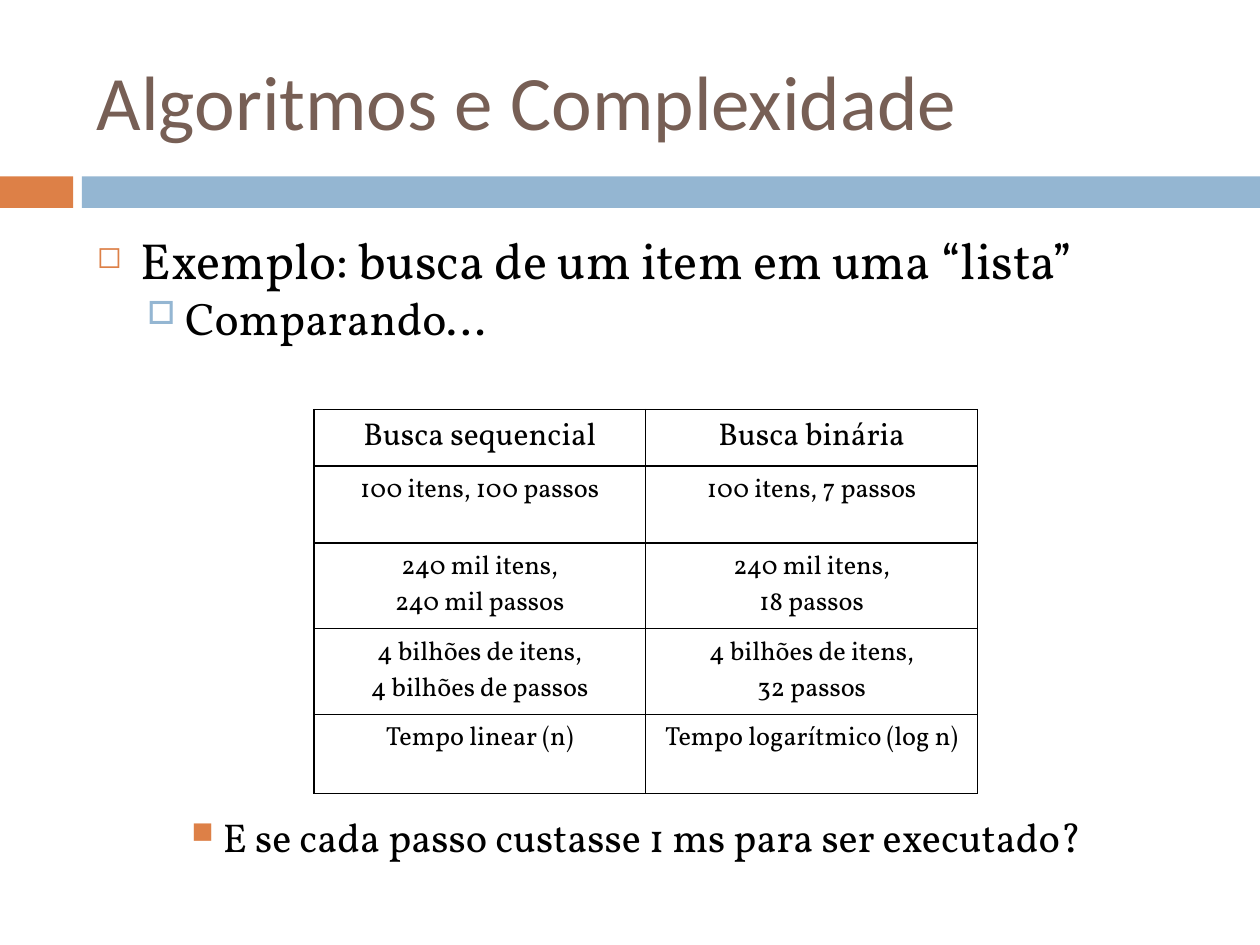
from lxml import etree
from pptx import Presentation
from pptx.dml.color import RGBColor
from pptx.enum.shapes import MSO_SHAPE
from pptx.enum.text import MSO_ANCHOR, PP_ALIGN
from pptx.oxml.ns import qn
from pptx.util import Inches, Pt

RECT = MSO_SHAPE.RECTANGLE
MIDDLE = MSO_ANCHOR.MIDDLE
TOP = MSO_ANCHOR.TOP
CENTER = PP_ALIGN.CENTER
LEFT = PP_ALIGN.LEFT

ORANGE, BLUE, BROWN, BLACK = "DD8047", "94B6D2", "775F55", "000000"
MARGIN, BODY_W = 0.67, 8.92
ROW_HEIGHTS = [0.45, 0.61, 0.68, 0.68, 0.63]
ROWS = [
    ("Busca sequencial", "Busca binária"),
    ("100 itens, 100 passos", "100 itens, 7 passos"),
    ("240 mil itens,\n240 mil passos", "240 mil itens,\n18 passos"),
    ("4 bilhões de itens,\n4 bilhões de passos", "4 bilhões de itens,\n32 passos"),
    ("Tempo linear (n)", "Tempo logarítmico (log n)"),
]


def rgb(color):
    """Return the colour of a hex string."""
    return RGBColor.from_string(color)


def add_bar(s, left, width, color):
    """Add one part of the band under the title."""
    sp = s.shapes.add_shape(RECT, Inches(left), Inches(1.4), Inches(width), Inches(0.25))
    sp.shadow.inherit = False
    sp.fill.solid()
    sp.fill.fore_color.rgb = rgb(color)
    sp.line.fill.background()


def write(p, text, size, font="Vollkorn", color=BLACK, align=LEFT):
    """Write formatted text, with line breaks, into a paragraph."""
    p.text = text
    p.alignment = align
    for r in p.runs:
        r.font.size = Pt(size)
        r.font.name = font
        r.font.color.rgb = rgb(color)
    for br in p._p.findall(qn("a:br")):
        etree.SubElement(br, qn("a:rPr"), sz=str(size * 100))


def add_box(s, top, height, anchor=TOP):
    """Add a wrapping text box across the body and return its frame."""
    sp = s.shapes.add_textbox(Inches(MARGIN), Inches(top), Inches(BODY_W), Inches(height))
    tf = sp.text_frame
    tf.word_wrap = True
    tf.vertical_anchor = anchor
    return tf


def add_bullet(p, char, color, percent, left, hang, level):
    """Give a paragraph a coloured bullet and a hanging indent."""
    p.level = level
    pPr = p._p.get_or_add_pPr()
    pPr.set("marL", str(Inches(left)))
    pPr.set("indent", str(-Inches(hang)))
    clr = etree.SubElement(pPr, qn("a:buClr"))
    etree.SubElement(clr, qn("a:srgbClr"), val=color)
    etree.SubElement(pPr, qn("a:buSzPct"), val=str(percent * 1000))
    etree.SubElement(pPr, qn("a:buChar"), char=char)


def add_borders(cell):
    """Draw a thin black line on each side of a cell."""
    tcPr = cell._tc.get_or_add_tcPr()
    for i, side in enumerate(("lnL", "lnR", "lnT", "lnB")):
        ln = etree.Element(qn(f"a:{side}"), w=str(Pt(1)))
        fill = etree.SubElement(ln, qn("a:solidFill"))
        etree.SubElement(fill, qn("a:srgbClr"), val=BLACK)
        tcPr.insert(i, ln)


def add_comparison(s):
    """Add the table that compares the two searches."""
    frame = s.shapes.add_table(len(ROWS), 2, Inches(2.49), Inches(3.25),
                               Inches(5.27), Inches(sum(ROW_HEIGHTS)))
    table = frame.table
    table.first_row = table.horz_banding = False
    for i, (row, height) in enumerate(zip(ROWS, ROW_HEIGHTS)):
        table.rows[i].height = Inches(height)
        for j, text in enumerate(row):
            cell = table.cell(i, j)
            cell.fill.background()
            add_borders(cell)
            write(cell.text_frame.paragraphs[0], text, 15 if i else 18, align=CENTER)


def main():
    """Build the slide and save it."""
    prs = Presentation()
    prs.slide_width, prs.slide_height = Inches(10), Inches(7.5)
    s = prs.slides.add_slide(prs.slide_layouts[6])
    add_bar(s, 0, 0.58, ORANGE)
    add_bar(s, 0.65, 9.35, BLUE)
    title = add_box(s, 0.25, 1.08, MIDDLE)
    write(title.paragraphs[0], "Algoritmos e Complexidade", 44, "Calibri", BROWN)
    tf = add_box(s, 1.77, 1.2)
    p = tf.paragraphs[0]
    write(p, "Exemplo: busca de um item em uma “lista”", 29)
    add_bullet(p, "◻", ORANGE, 60, 0.35, 0.35, 0)
    p = tf.add_paragraph()
    write(p, "Comparando...", 26)
    add_bullet(p, "□", BLUE, 70, 0.7, 0.3, 1)
    add_comparison(s)
    p = add_box(s, 6.4, 0.58).paragraphs[0]
    write(p, "E se cada passo custasse 1 ms para ser executado?", 23)
    add_bullet(p, "■", ORANGE, 75, 1, 0.25, 2)
    prs.save("out.pptx")


if __name__ == "__main__":
    main()
